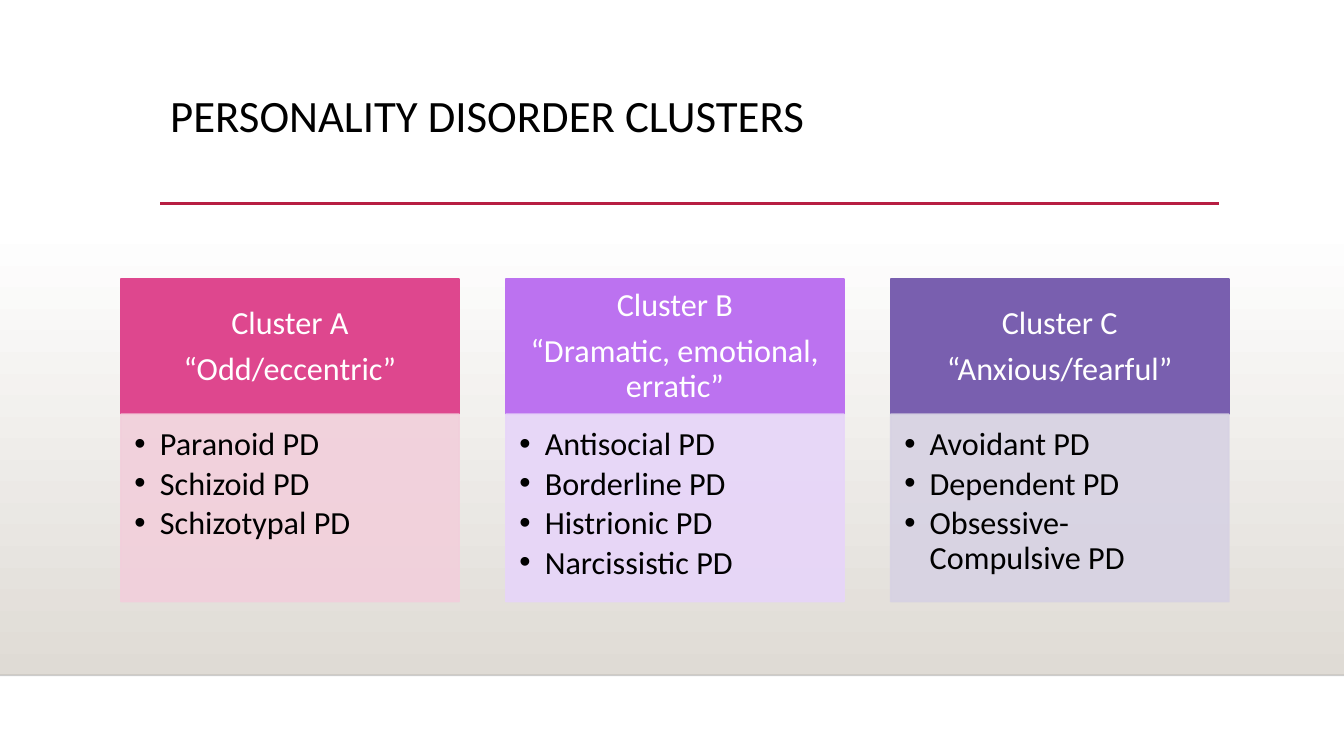
from lxml.etree import SubElement
from pptx import Presentation
from pptx.dml.color import RGBColor
from pptx.enum.shapes import MSO_CONNECTOR, MSO_SHAPE
from pptx.enum.text import MSO_ANCHOR, PP_ALIGN
from pptx.oxml.ns import qn
from pptx.util import Cm, Pt

TITLE = "PERSONALITY DISORDER CLUSTERS"
BLACK = RGBColor(0x00, 0x00, 0x00)
WHITE = RGBColor(0xFF, 0xFF, 0xFF)
SAND = RGBColor(0xDF, 0xDB, 0xD5)
CRIMSON = RGBColor(0xB7, 0x1E, 0x42)
PINK, PALE_PINK = RGBColor(0xDE, 0x47, 0x8E), RGBColor(0xF2, 0xCF, 0xDB)
VIOLET, PALE_VIOLET = RGBColor(0xBC, 0x72, 0xF0), RGBColor(0xE7, 0xD5, 0xF9)
PURPLE, PALE_PURPLE = RGBColor(0x79, 0x5F, 0xAF), RGBColor(0xD7, 0xD2, 0xE3)

# heading lines, disorders, heading colour, list colour
CLUSTERS = [
    (["Cluster A", "“Odd/eccentric”"],
     ["Paranoid PD", "Schizoid PD", "Schizotypal PD"], PINK, PALE_PINK),
    (["Cluster B", "“Dramatic, emotional, erratic”"],
     ["Antisocial PD", "Borderline PD", "Histrionic PD", "Narcissistic PD"],
     VIOLET, PALE_VIOLET),
    (["Cluster C", "“Anxious/fearful”"],
     ["Avoidant PD", "Dependent PD", "Obsessive-Compulsive PD"],
     PURPLE, PALE_PURPLE),
]

FONT = "Calibri"
SLIDE_W, SLIDE_H = Cm(33.87), Cm(19.05)
SHADE_TOP, FLOOR = Cm(5.61), Cm(17.02)
TITLE_LEFT, RULE_RIGHT, RULE_Y = Cm(4.04), Cm(30.73), Cm(5.13)
CARD_LEFT, CARD_STEP, CARD_W = Cm(3.05), Cm(9.7), Cm(8.52)
HEADING_TOP, HEADING_H, LIST_H = Cm(7.03), Cm(3.41), Cm(4.72)
HEADING_INSETS = Cm(0.45), Cm(0.26), Cm(0.45), Cm(0.26)
LIST_INSETS = Cm(0.34), Cm(0.34), Cm(0.45), Cm(0.51)
INDENT = Cm(0.64)


def set_opacity(fill_owner, percent):
    for colour in fill_owner.iter(qn("a:srgbClr")):
        SubElement(colour, qn("a:alpha"), val=str(percent * 1000))


def add_rule(shapes, left, right, y, colour, weight):
    rule = shapes.add_connector(MSO_CONNECTOR.STRAIGHT, left, y, right, y)
    rule.line.color.rgb = colour
    rule.line.width = Pt(weight)
    SubElement(rule.element.spPr, qn("a:effectLst"))
    return rule


def add_panel(shapes, left, top, width, height):
    panel = shapes.add_shape(MSO_SHAPE.RECTANGLE, left, top, width, height)
    panel.shadow.inherit = False
    return panel


def write(frame, lines, size, colour, align=PP_ALIGN.LEFT, after=0, bullets=False):
    frame.word_wrap = True
    for number, line in enumerate(lines):
        paragraph = frame.add_paragraph() if number else frame.paragraphs[0]
        if bullets:
            props = paragraph._p.get_or_add_pPr()
            props.set("marL", str(INDENT))
            props.set("indent", str(-INDENT))
            SubElement(props, qn("a:buFont"), typeface="Arial")
            SubElement(props, qn("a:buChar"), char="•")
        paragraph.alignment = align
        paragraph.line_spacing = 0.9
        paragraph.space_after = Pt(after)
        run = paragraph.add_run()
        run.text = line
        run.font.name = FONT
        run.font.size = Pt(size)
        run.font.color.rgb = colour


def add_card_part(shapes, left, top, height, colour, insets, anchor):
    """Add one coloured block of a cluster card and return it."""
    part = add_panel(shapes, left, top, CARD_W, height)
    part.fill.solid()
    part.fill.fore_color.rgb = colour
    part.line.color.rgb = colour
    part.line.width = Pt(1.25)
    frame = part.text_frame
    (frame.margin_left, frame.margin_top,
     frame.margin_right, frame.margin_bottom) = insets
    frame.vertical_anchor = anchor
    return part


def main():
    deck = Presentation()
    deck.slide_width, deck.slide_height = SLIDE_W, SLIDE_H
    slide = deck.slides.add_slide(deck.slide_layouts[6])
    shapes = slide.shapes
    slide.background.fill.solid()
    slide.background.fill.fore_color.rgb = WHITE

    shade = add_panel(shapes, 0, SHADE_TOP, SLIDE_W, FLOOR - SHADE_TOP)
    shade.line.fill.background()
    shade.fill.gradient()
    shade.fill.gradient_angle = 270
    for stop, position, colour in zip(shade.fill.gradient_stops, (0, 1), (WHITE, SAND)):
        stop.position = position
        stop.color.rgb = colour

    floor_line = add_rule(shapes, 0, SLIDE_W, FLOOR, BLACK, 1)
    set_opacity(floor_line.element.spPr, 20)
    add_rule(shapes, TITLE_LEFT, RULE_RIGHT, RULE_Y, CRIMSON, 2.5)

    title = shapes.add_textbox(TITLE_LEFT, Cm(2.24), Cm(26.67), Cm(2.92))
    write(title.text_frame, [TITLE], 32, BLACK)

    for column, (heading, disorders, strong, pale) in enumerate(CLUSTERS):
        left = CARD_LEFT + column * CARD_STEP
        head = add_card_part(shapes, left, HEADING_TOP, HEADING_H, strong,
                             HEADING_INSETS, MSO_ANCHOR.MIDDLE)
        write(head.text_frame, heading, 23, WHITE, PP_ALIGN.CENTER, after=8)
        body = add_card_part(shapes, left, HEADING_TOP + HEADING_H, LIST_H, pale,
                             LIST_INSETS, MSO_ANCHOR.TOP)
        set_opacity(body.element.spPr, 90)
        write(body.text_frame, disorders, 23, BLACK, after=3.4, bullets=True)

    deck.save("out.pptx")


if __name__ == "__main__":
    main()
